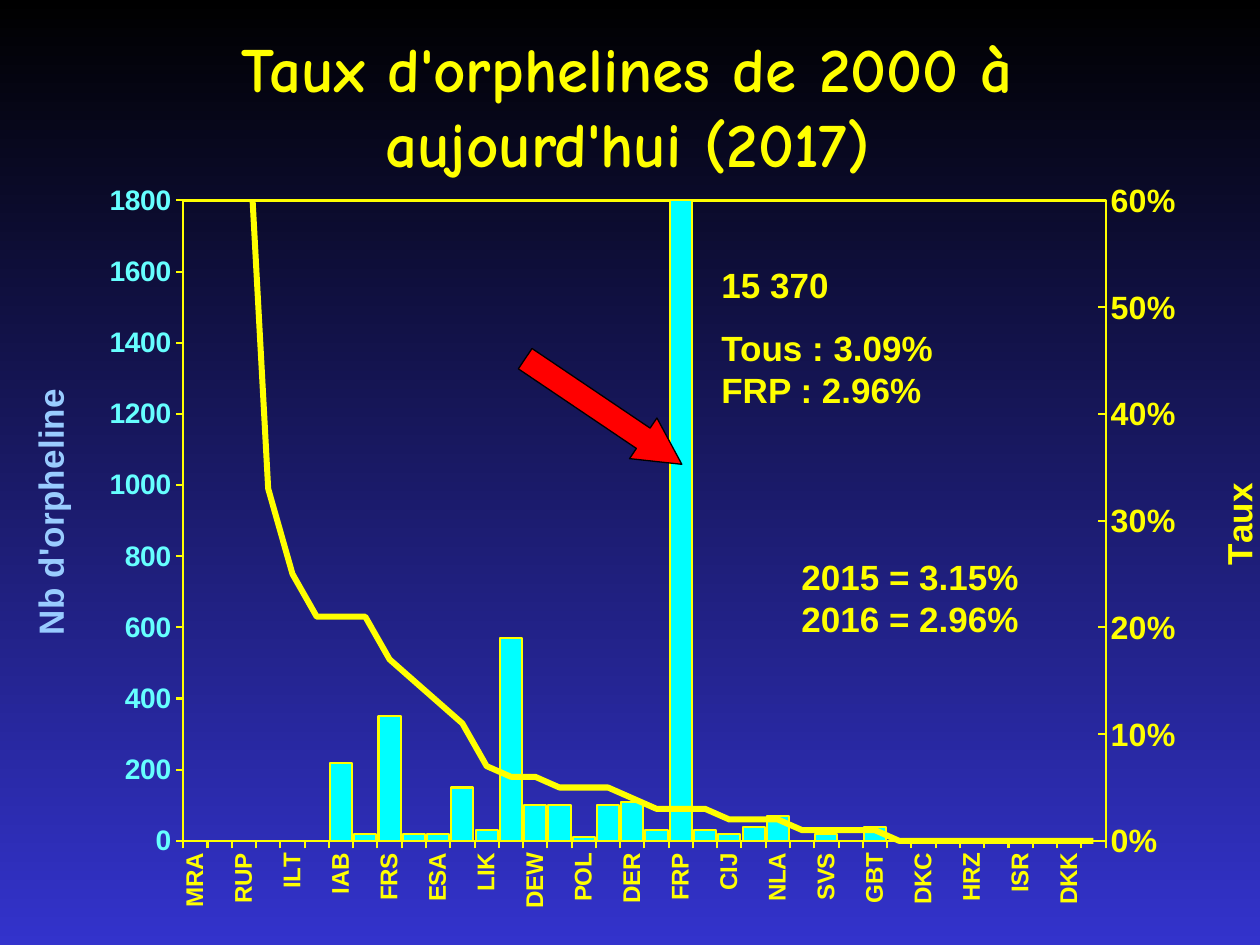
from copy import deepcopy

from lxml import etree
from pptx import Presentation
from pptx.chart.axis import CategoryAxis, ValueAxis
from pptx.chart.data import CategoryChartData
from pptx.dml.color import RGBColor
from pptx.enum.chart import XL_CHART_TYPE, XL_TICK_MARK
from pptx.enum.shapes import MSO_SHAPE
from pptx.enum.text import MSO_ANCHOR, MSO_AUTO_SIZE, PP_ALIGN
from pptx.oxml import parse_xml
from pptx.oxml.ns import qn
from pptx.util import Pt

COLUMN = XL_CHART_TYPE.COLUMN_CLUSTERED
IN, OUT, NONE = XL_TICK_MARK.INSIDE, XL_TICK_MARK.OUTSIDE, XL_TICK_MARK.NONE
ARROW = MSO_SHAPE.RIGHT_ARROW
MIDDLE, CENTER = MSO_ANCHOR.MIDDLE, PP_ALIGN.CENTER
GROW = MSO_AUTO_SIZE.SHAPE_TO_FIT_TEXT

SCALE = 914400 / 126
YELLOW, CYAN, AQUA, SKY = "FFFF00", "00FFFF", "66FFFF", "99CCFF"
NS = ('xmlns:c="http://schemas.openxmlformats.org/drawingml/2006/chart" '
      'xmlns:a="http://schemas.openxmlformats.org/drawingml/2006/main"')
TURN = "-5400000"

CODES = ("MRA TUA RUP RSB ILT NAW IAB LVR FRS BYM ESA ESI LIK BLB DEW DEH POL "
         "HES DER CZP FRP SFH CIJ PLG NLA HGB SVS ETM GBT NOS DKC RUM HRZ SLL "
         "ISR SKB DKK UKK").split()
COUNTS = [0, 0, 0, 0, 0, 0, 220, 20, 350, 20, 20, 150, 30, 570, 100, 100, 10,
          100, 110, 30, 15370, 30, 20, 40, 70, 0, 20, 0, 40, 0, 0, 0] + [None] * 6
RATES = [1, 0.8, 0.75, 0.33, 0.25, 0.21, 0.21, 0.21, 0.17, 0.15, 0.13, 0.11,
         0.07, 0.06, 0.06, 0.05, 0.05, 0.05, 0.04, 0.03, 0.03, 0.03, 0.02, 0.02,
         0.02, 0.01, 0.01, 0.01, 0.01] + [0] * 9


def px(*vals):
    return [round(v * SCALE) for v in vals]


def rgb(code):
    return RGBColor.from_string(code)


def style(font, size, color, name="Arial"):
    font.size, font.bold, font.name = Pt(size), True, name
    font.color.rgb = rgb(color)


def stroke(line, color, width):
    line.color.rgb = rgb(color)
    line.width = Pt(width)


def node(body):
    """Parse one chart or drawing element, given without namespaces."""
    head, tail = body.split(">", 1)
    slash = "/" if head.endswith("/") else ""
    return parse_xml(f"{head.rstrip('/')} {NS}{slash}>{tail}")


def layout(x, y, w=None, h=None):
    parts = '<c:xMode val="edge"/><c:yMode val="edge"/>'
    if w:
        parts = '<c:layoutTarget val="inner"/>' + parts
    sizes = zip("xywh", (x, y, w, h))
    parts += "".join(f'<c:{k} val="{v}"/>' for k, v in sizes if v)
    return node(f"<c:layout><c:manualLayout>{parts}</c:manualLayout></c:layout>")


def drop(parent, tag):
    for kid in parent.findall(qn(tag)):
        parent.remove(kid)


def paint_back(slide):
    fill = slide.background.fill
    fill.gradient()
    fill.gradient_angle = 270
    for stop, pos, color in zip(fill.gradient_stops, (0, 1), ("000000", "3333CC")):
        stop.position = pos
        stop.color.rgb = rgb(color)


def add_title(slide, box, text):
    title = slide.shapes.title
    title.left, title.top, title.width, title.height = px(*box)
    frame = title.text_frame
    frame.text, frame.word_wrap, frame.vertical_anchor = text, True, MIDDLE
    para = frame.paragraphs[0]
    para.alignment = CENTER
    style(para.font, 36, YELLOW, "Comic Neue")
    para.runs[0].font._element.append(node(
        '<a:effectLst><a:outerShdw dist="35921" dir="2700000">'
        '<a:srgbClr val="000000"/></a:outerShdw></a:effectLst>'))


def dress(axis, size, color, tick):
    axis.has_major_gridlines = False
    axis.major_tick_mark, axis.minor_tick_mark = tick, NONE
    style(axis.tick_labels.font, size, color)
    stroke(axis.format.line, YELLOW, 1.15)


def name_axis(axis, text, color, x, y):
    title = axis.axis_title
    frame = title.text_frame
    frame.text = text
    style(frame.paragraphs[0].font, 20, color)
    root = title._element
    body = next(root.iter(qn("a:bodyPr")))
    body.set("rot", TURN)
    body.set("vert", "horz")
    drop(root, "c:layout")
    root.find(qn("c:tx")).addnext(layout(x, y))


def split_line(area, ser, ids):
    """Move a column series into a line chart on its own axes."""
    drop(ser, "c:invertIfNegative")
    ser.find(qn("c:spPr")).addnext(node('<c:marker><c:symbol val="none"/></c:marker>'))
    ser.append(node('<c:smooth val="0"/>'))
    line = node('<c:lineChart><c:grouping val="standard"/><c:varyColors val="0"/>'
                '<c:marker val="1"/>'
                + "".join(f'<c:axId val="{i}"/>' for i in ids) + "</c:lineChart>")
    line.find(qn("c:varyColors")).addnext(ser)
    area.find(qn("c:barChart")).addnext(line)


def twin(root, own, cross):
    """Copy an axis under new ids."""
    copy = deepcopy(root)
    copy.find(qn("c:axId")).set("val", own)
    copy.find(qn("c:crossAx")).set("val", cross)
    return copy


def add_combo(slide, box):
    data = CategoryChartData()
    data.categories = CODES
    data.add_series("Series 1", COUNTS)
    data.add_series("Series 2", RATES, "0%")
    chart = slide.shapes.add_chart(COLUMN, *px(*box), data).chart
    chart.has_title = chart.has_legend = False
    chart.font.name, chart.font.size = "Arial", Pt(11.5)
    plot = chart.plots[0]
    plot.gap_width, plot.vary_by_categories = 10, False
    bars, rate = plot.series
    bars.format.fill.solid()
    bars.format.fill.fore_color.rgb = rgb(CYAN)
    stroke(bars.format.line, YELLOW, 1.15)
    stroke(rate.format.line, YELLOW, 3.44)

    cat, left = chart.category_axis, chart.value_axis
    dress(cat, 13.8, YELLOW, OUT)
    dress(left, 16.1, AQUA, OUT)
    left.minimum_scale, left.maximum_scale, left.major_unit = 0, 1800, 200
    base = cat._element
    next(base.iter(qn("a:bodyPr"))).set("rot", TURN)
    last = base.find(qn("c:noMultiLvlLbl"))
    last.addprevious(node('<c:tickLblSkip val="2"/>'))
    last.addprevious(node('<c:tickMarkSkip val="1"/>'))

    ids = "5001", "5002"
    far = twin(base, *ids)
    side = twin(left._element, *ids[::-1])
    left._element.addnext(side)
    side.addnext(far)
    side.find(qn("c:axPos")).set("val", "r")
    side.find(qn("c:crosses")).set("val", "max")
    CategoryAxis(far).visible = False
    right = ValueAxis(side)
    dress(right, 18.4, YELLOW, IN)
    right.maximum_scale, right.major_unit = 0.6, 0.1
    right.tick_labels.number_format = "0%"
    right.tick_labels.number_format_is_linked = False
    name_axis(left, "Nb d'orpheline", SKY, 0.02, 0.29)
    name_axis(right, "Taux", YELLOW, 0.94, 0.41)

    area = base.getparent()
    split_line(area, rate._element, ids)
    drop(area, "c:layout")
    area.insert(0, layout(0.145, 0.058, 0.714, 0.817))
    area.append(node('<c:spPr><a:noFill/><a:ln w="14600"><a:solidFill>'
                     f'<a:srgbClr val="{YELLOW}"/></a:solidFill></a:ln></c:spPr>'))


def add_note(slide, box, *lines):
    frame = slide.shapes.add_textbox(*px(*box)).text_frame
    frame.text = "\n".join(lines)
    frame.word_wrap, frame.auto_size = False, GROW
    for para in frame.paragraphs:
        style(para.font, 20, YELLOW)


def add_arrow(slide, box, turn):
    arrow = slide.shapes.add_shape(ARROW, *px(*box))
    arrow.rotation = turn
    arrow.adjustments[0], arrow.adjustments[1] = 0.5, 0.95
    arrow.shadow.inherit = False
    arrow.fill.solid()
    arrow.fill.fore_color.rgb = rgb("FF0000")
    stroke(arrow.line, "000000", 0.75)


def main():
    deck = Presentation()
    deck.slide_width, deck.slide_height = px(1260, 945)
    slide = deck.slides.add_slide(deck.slide_layouts[5])
    paint_back(slide)
    add_title(slide, (92, 26, 1071, 158), "Taux d'orphelines de 2000 à aujourd'hui (2017)")
    add_combo(slide, (-4, 155, 1292, 784))
    add_note(slide, (709, 257, 134, 55), "15 370")
    add_arrow(slide, (509, 387, 189, 49), 34)
    add_note(slide, (709, 320, 238, 97), "Tous : 3.09%", "FRP : 2.96%")
    add_note(slide, (789, 549, 244, 97), "2015 = 3.15%", "2016 = 2.96%")
    deck.save("out.pptx")


if __name__ == "__main__":
    main()
